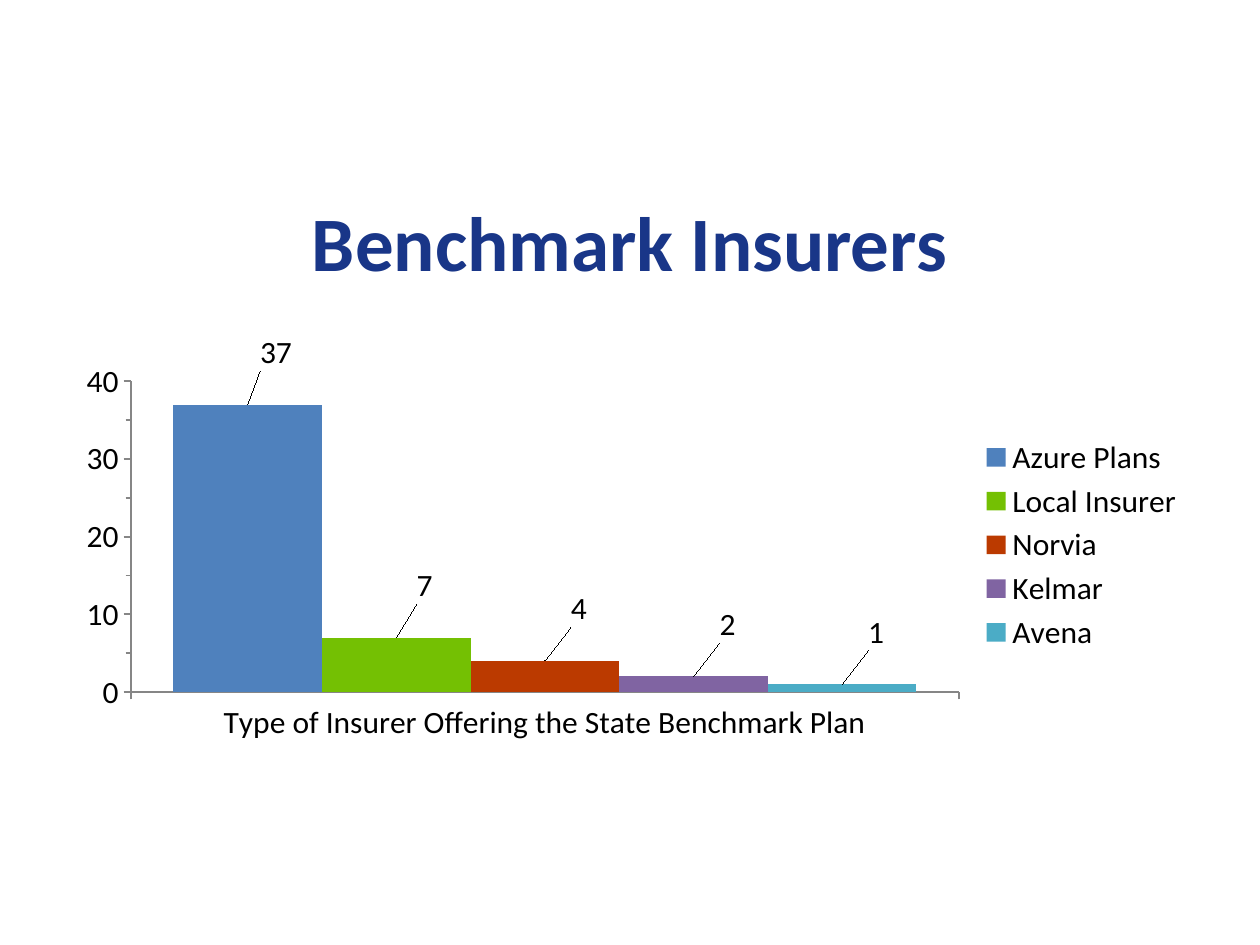
from dataclasses import dataclass
from pptx import Presentation, util as u
from pptx.chart.data import CategoryChartData
from pptx.dml.color import RGBColor
from pptx.enum import chart as ch, text as tx
from pptx.oxml import parse_xml
from pptx.oxml.ns import nsdecls


@dataclass(frozen=True)
class Theme:
    face: str = "Calibri"
    navy: str = "193688"
    ink: str = "000000"
    axis: str = "868686"
    head: int = 44
    body: int = 18


THEME = Theme()
WIDE, HIGH = 10, 7.5
# name, plans, colour, label shift as shares of the chart
PLANS = [
    ("Azure Plans", 37, "4F81BD", 0.025, -0.07),
    ("Local Insurer", 7, "74C003", 0.025, -0.07),
    ("Norvia", 4, "BB3A00", 0.03, -0.07),
    ("Kelmar", 2, "8064A2", 0.03, -0.07),
    ("Avena", 1, "4BACC6", 0.03, -0.07),
]


def put(item, **vals):
    for key, val in vals.items():
        setattr(item, key, val)


def style(font, size, hue, bold=False):
    put(font, name=THEME.face, size=u.Pt(size), bold=bold)
    font.color.rgb = RGBColor.from_string(hue)


def place(box):
    """Turn shares of the slide into lengths."""
    return [u.Inches(part * side) for part, side in zip(box, (WIDE, HIGH) * 2)]


def layout(inner=False, **parts):
    """Make a manual chart layout from shares of the chart."""
    target = '<c:layoutTarget val="inner"/>' if inner else ""
    modes = '<c:xMode val="edge"/><c:yMode val="edge"/>' if inner else ""
    body = "".join(f'<c:{key} val="{val}"/>' for key, val in parts.items())
    return parse_xml(f'<c:layout {nsdecls("c")}><c:manualLayout>{target}{modes}'
                     f'{body}</c:manualLayout></c:layout>')


def title(slide, box, words):
    frame = slide.shapes.add_textbox(*place(box)).text_frame
    put(frame, word_wrap=True, vertical_anchor=tx.MSO_ANCHOR.MIDDLE)
    para = frame.paragraphs[0]
    put(para, text=words, alignment=tx.PP_ALIGN.CENTER)
    style(para.font, THEME.head, THEME.navy, True)


def axes(chart):
    out = ch.XL_TICK_MARK.OUTSIDE
    put(chart.category_axis, major_tick_mark=out)
    put(chart.value_axis, major_tick_mark=out, minor_tick_mark=out,
        has_major_gridlines=False, minimum_scale=0, maximum_scale=40,
        major_unit=10, minor_unit=5)
    for axis in (chart.category_axis, chart.value_axis):
        line = axis.format.line
        line.color.rgb = RGBColor.from_string(THEME.axis)
        line.width = u.Pt(1)
        style(axis.tick_labels.font, THEME.body, THEME.ink)


def paint(bar, hue, across, down):
    """Colour one series and shift its value label."""
    bar.format.fill.solid()
    bar.format.fill.fore_color.rgb = RGBColor.from_string(hue)
    bar.invert_if_negative = False
    bar.data_labels.show_value = True
    label = bar.points[0].data_label
    label.position = ch.XL_LABEL_POSITION.OUTSIDE_END
    style(label.font, THEME.body, THEME.ink)
    node = bar._element.xpath(".//c:dLbl")[0]
    node.insert(1, layout(x=across, y=down))


def bars(slide, box, topic):
    data = CategoryChartData()
    data.categories = [topic]
    for name, count, *_ in PLANS:
        data.add_series(name, [count])
    kind = ch.XL_CHART_TYPE.COLUMN_CLUSTERED
    chart = slide.shapes.add_chart(kind, *place(box), data).chart
    put(chart, has_title=False, has_legend=True)
    style(chart.font, THEME.body, THEME.ink)
    put(chart.legend, position=ch.XL_LEGEND_POSITION.RIGHT,
        include_in_layout=False)
    style(chart.legend.font, THEME.body, THEME.ink)
    axes(chart)
    plot = chart.plots[0]
    put(plot, gap_width=57, overlap=0, vary_by_categories=False)
    for bar, (_, _, *look) in zip(plot.series, PLANS):
        paint(bar, *look)
    area = chart._chartSpace.xpath(".//c:plotArea")[0]
    for old in area.xpath("./c:layout"):
        area.remove(old)
    area.insert(0, layout(True, x=0.06, y=0.1, w=0.73, h=0.76))


def main():
    deck = Presentation()
    put(deck, slide_width=u.Inches(WIDE), slide_height=u.Inches(HIGH))
    slide = deck.slides.add_slide(deck.slide_layouts[6])
    title(slide, (0.05, 0.17, 0.9, 0.17), "Benchmark Insurers")
    bars(slide, (0.05, 0.353, 0.9, 0.44),
         "Type of Insurer Offering the State Benchmark Plan")
    deck.save("out.pptx")


if __name__ == "__main__":
    main()
